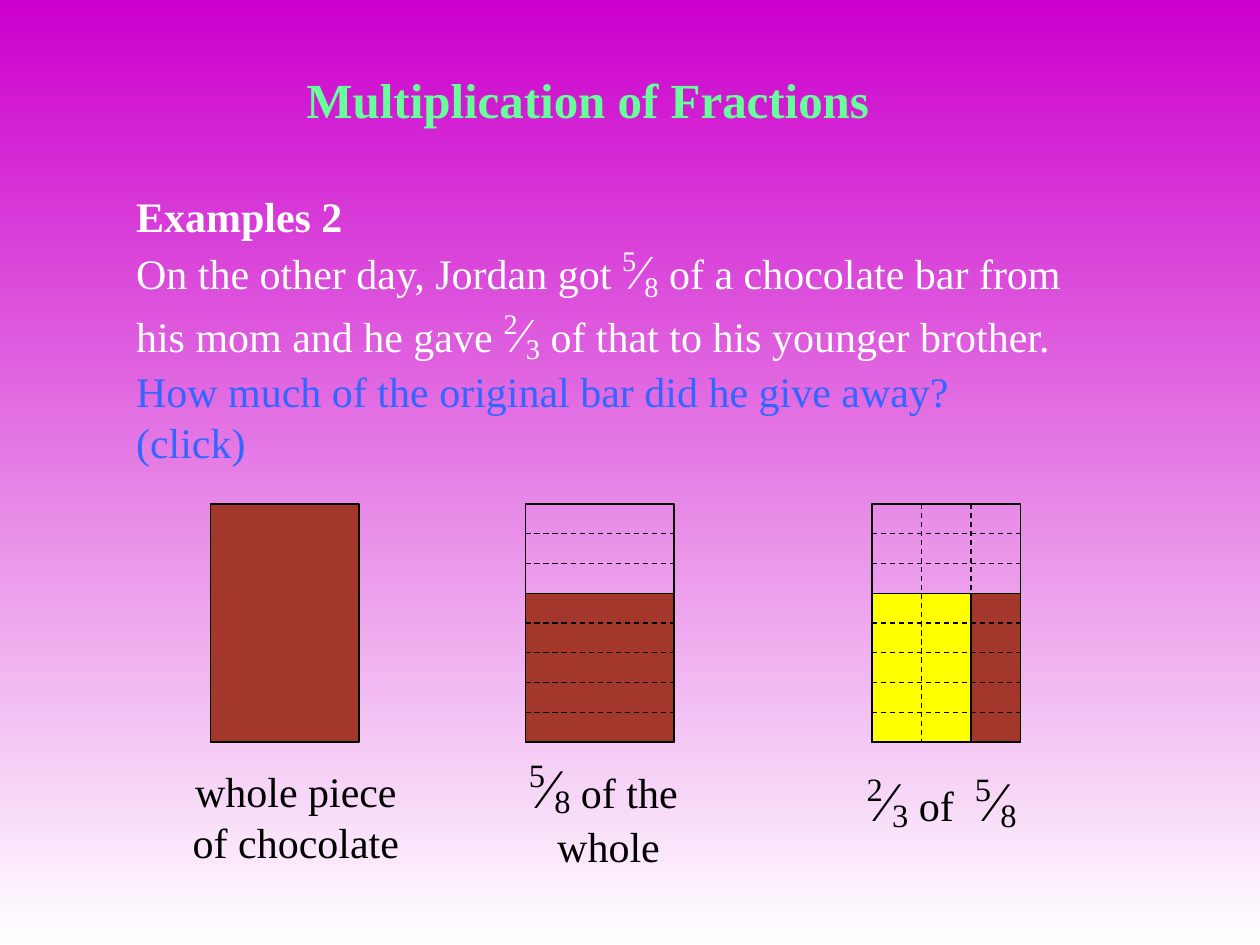
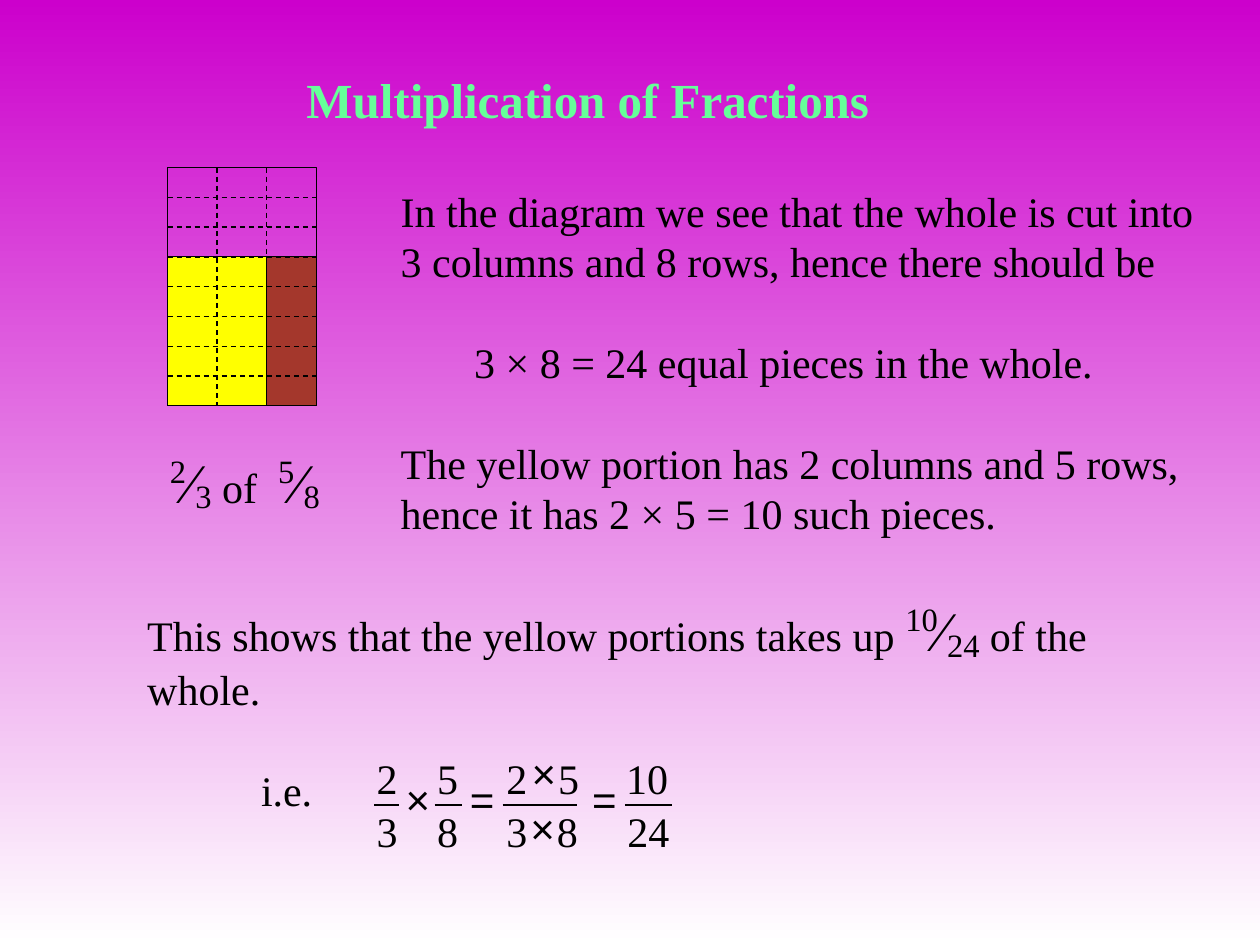
from dataclasses import dataclass
from typing import Optional

from lxml.etree import SubElement
from pptx import Presentation
from pptx.dml.color import RGBColor
from pptx.enum.dml import MSO_LINE
from pptx.enum.shapes import MSO_CONNECTOR, MSO_SHAPE
from pptx.enum.text import MSO_ANCHOR, MSO_AUTO_SIZE, PP_ALIGN
from pptx.oxml.ns import qn
from pptx.util import Inches, Pt

COLORS = {
    "top": "CC00CC", "bottom": "FFFFFF", "title": "66FF99", "ink": "000000",
    "white": "FFFFFF", "question": "3366FF", "chocolate": "A4372C", "given": "FFFF00",
}
SERIF, SANS = "Times New Roman", "Arial"
WIDTH, HEIGHT = Inches(10), Inches(7.5)
COLUMN, ROW = WIDTH / 100, HEIGHT / 75  # square grid cells
BAR_COLUMNS, BAR_ROWS = 11.8, 18.9
BODY_SIZE, LINE_FACTOR = 24, 1.2
BLANK_LINE = BODY_SIZE * LINE_FACTOR


@dataclass(frozen=True)
class Area:
    """A rectangle in grid columns and rows."""
    left: float
    top: float
    width: float
    height: float

    def lengths(self) -> tuple[int, int, int, int]:
        return (round(self.left * COLUMN), round(self.top * ROW),
                round(self.width * COLUMN), round(self.height * ROW))


@dataclass(frozen=True)
class Span:
    text: str
    size: Optional[float] = None
    baseline: int = 0


@dataclass(frozen=True)
class Para:
    spans: tuple[Span, ...]
    color: str = "ink"
    size: float = BODY_SIZE
    bold: bool = False
    align: PP_ALIGN = PP_ALIGN.LEFT
    before: float = 0
    indent: float = 0
    font: str = SERIF


@dataclass(frozen=True)
class ChocolateBar:
    """A bar cut into rows and columns, with its lowest rows kept."""
    left: float
    top: float
    rows: int = 1
    columns: int = 1
    kept_rows: int = 1
    given_columns: int = 0


@dataclass(frozen=True)
class Symbol:
    text: str
    left: float
    top: float


def plain(text: str, **style) -> Para:
    return Para((Span(text),), **style)


def fraction(top: str, bottom: str, size: float = 32, drop: int = -10) -> tuple[Span, ...]:
    return Span(top, size, 36), Span("⁄", size), Span(bottom, size, drop)


def write(frame, paras: list[Para], wrap: bool = True, inset: bool = True) -> None:
    frame.word_wrap = wrap
    frame.auto_size = MSO_AUTO_SIZE.NONE
    frame.vertical_anchor = MSO_ANCHOR.TOP
    if not inset:
        frame.margin_left = frame.margin_right = frame.margin_top = frame.margin_bottom = 0
    for index, para in enumerate(paras):
        paragraph = frame.add_paragraph() if index else frame.paragraphs[0]
        properties = paragraph._p.get_or_add_pPr()
        properties.set("marL", str(round(para.indent * COLUMN)))
        properties.set("indent", "0")
        SubElement(properties, qn("a:buNone"))
        paragraph.alignment = para.align
        paragraph.space_before = Pt(para.before)
        if len(para.spans) == 1:
            paragraph.line_spacing = Pt(para.size * LINE_FACTOR)
        paragraph.font.name = para.font
        paragraph.font.size = Pt(para.size)
        paragraph.font.bold = para.bold
        paragraph.font.color.rgb = RGBColor.from_string(COLORS[para.color])
        for span in para.spans:
            for number, text in enumerate(span.text.split("\n")):
                if number:
                    paragraph.add_line_break()
                run = paragraph.add_run()
                run.text = text
                if span.size:
                    run.font.size = Pt(span.size)
                if span.baseline:
                    run._r.get_or_add_rPr().set("baseline", str(span.baseline * 1000))


def fill_placeholder(shape, area: Area, paras: list[Para], wrap: bool = True) -> None:
    shape.left, shape.top, shape.width, shape.height = area.lengths()
    write(shape.text_frame, paras, wrap)


def add_text(page, area: Area, paras: list[Para], wrap: bool = False, inset: bool = True) -> None:
    write(page.shapes.add_textbox(*area.lengths()).text_frame, paras, wrap, inset)


def add_box(page, area: Area, fill: Optional[str] = None):
    box = page.shapes.add_shape(MSO_SHAPE.RECTANGLE, *area.lengths())
    box.shadow.inherit = False
    if fill:
        box.fill.solid()
        box.fill.fore_color.rgb = RGBColor.from_string(COLORS[fill])
    else:
        box.fill.background()
    box.line.color.rgb = RGBColor.from_string(COLORS["ink"])
    box.line.width = Pt(0.75)
    return box


def add_line(page, area: Area, weight: float = 0.75, dashed: bool = True):
    left, top, width, height = area.lengths()
    line = page.shapes.add_connector(MSO_CONNECTOR.STRAIGHT, left, top, left + width, top + height)
    SubElement(line._element.spPr, qn("a:effectLst"))
    line.line.color.rgb = RGBColor.from_string(COLORS["ink"])
    line.line.width = Pt(weight)
    if dashed:
        line.line.dash_style = MSO_LINE.DASH
    return line


def draw_bar(page, bar: ChocolateBar) -> None:
    row, column = BAR_ROWS / bar.rows, BAR_COLUMNS / bar.columns
    kept_top = bar.top + (bar.rows - bar.kept_rows) * row
    kept_height = bar.kept_rows * row
    add_box(page, Area(bar.left, kept_top, BAR_COLUMNS, kept_height), "chocolate")
    if bar.given_columns:
        add_box(page, Area(bar.left, kept_top, bar.given_columns * column, kept_height), "given")
    if bar.rows == 1:
        return
    outline = add_box(page, Area(bar.left, bar.top, BAR_COLUMNS, BAR_ROWS))
    for cut in range(1, bar.columns):
        add_line(page, Area(bar.left + cut * column, bar.top, 0, BAR_ROWS))
    for cut in range(1, bar.rows):
        line = add_line(page, Area(bar.left, bar.top + cut * row, BAR_COLUMNS, 0))
        if cut * 2 == bar.rows:
            line.begin_connect(outline, 1)
            line.end_connect(outline, 3)


def set_background(deck) -> None:
    fill = deck.slide_master.background.fill
    fill.gradient()
    fill.gradient_angle = 270
    for stop, name in zip(fill.gradient_stops, ("top", "bottom")):
        stop.color.rgb = RGBColor.from_string(COLORS[name])


def add_page(deck, body_area: Area, body: list[Para]):
    page = deck.slides.add_slide(deck.slide_layouts[1])
    title = plain("Multiplication of Fractions", color="title", size=28, bold=True,
                  align=PP_ALIGN.CENTER)
    fill_placeholder(page.shapes.title, Area(23.3, 5, 46.7, 5.7), [title], wrap=False)
    fill_placeholder(page.placeholders[1], body_area, body)
    return page


TWO_THIRDS_OF_FIVE_EIGHTHS = Para(fraction("2", "3") + (Span(" of  "),) + fraction("5", "8"))


def build_example(deck) -> None:
    story = (Span("On the other day, Jordan got "), *fraction("5", "8", 28, -16),
             Span(" of a chocolate bar from his mom and he gave "),
             *fraction("2", "3", 28, -16), Span(" of that to his younger brother."))
    page = add_page(deck, Area(9.8, 14.6, 77.7, 22.3), [
        plain("Examples 2", color="white", bold=True),
        Para(story, color="white"),
        plain("How much of the original bar did he give away?", color="question"),
        plain("(click)", color="question"),
    ])
    add_text(page, Area(14.3, 60.3, 19.2, 9),
             [plain("whole piece \nof chocolate ", align=PP_ALIGN.CENTER)])
    add_text(page, Area(40.8, 59.2, 15, 10.3),
             [Para(fraction("5", "8") + (Span(" of the \nwhole"),), align=PP_ALIGN.CENTER)])
    add_text(page, Area(67.8, 60.3, 15.5, 6.3), [TWO_THIRDS_OF_FIVE_EIGHTHS])
    for bar in (ChocolateBar(16.7, 40),
                ChocolateBar(41.7, 40, rows=8, kept_rows=5),
                ChocolateBar(69.2, 40, rows=8, columns=3, kept_rows=5, given_columns=2)):
        draw_bar(page, bar)


def draw_equation(page) -> None:
    bar_row, upper_row, middle_row = 63.9, 59.7, 61.4
    for left, width in ((29.7, 2), (34.5, 2.2), (39.9, 5.9), (49.6, 3.7)):
        add_line(page, Area(left, bar_row, width, 0), weight=1, dashed=False)
    stacks = (("2", "3", 29.9, 29.9), ("5", "8", 34.7, 34.7), ("2", "3", 40.2, 40.2),
              ("5", "8", 44.3, 44.2), ("10", "24", 49.7, 49.8))
    symbols = [Symbol("×", 32.2, middle_row), Symbol("=", 37.3, middle_row),
               Symbol("=", 47, middle_row), Symbol("×", 42.2, 59.3), Symbol("×", 42.1, 63.7)]
    for upper, lower, upper_left, lower_left in stacks:
        symbols += [Symbol(upper, upper_left, upper_row), Symbol(lower, lower_left, bar_row)]
    for symbol in symbols:
        font = SERIF if symbol.text.isdigit() else SANS
        add_text(page, Area(symbol.left, symbol.top, 4.7, 4.6),
                 [plain(symbol.text, font=font)], inset=False)


def build_explanation(deck) -> None:
    page = add_page(deck, Area(30.8, 14.2, 66.7, 25), [
        plain("In the diagram we see that the whole is cut into 3 columns and 8 rows, "
              "hence there should be"),
        plain("3 × 8 = 24 equal pieces in the whole.", before=BLANK_LINE, indent=5.83),
        plain("The yellow portion has 2 columns and 5 rows, hence it has "
              "2 × 5 = 10 such pieces.", before=BLANK_LINE),
    ])
    add_text(page, Area(12.5, 35, 14.6, 6.3), [TWO_THIRDS_OF_FIVE_EIGHTHS])
    conclusion = (Span("This shows that the yellow portions takes up "),
                  *fraction("10", "24"), Span(" of the whole."))
    add_text(page, Area(10.7, 46.8, 81.8, 18.3),
             [Para(conclusion), plain("i.e.", before=BLANK_LINE, indent=9.03)], wrap=True)
    draw_bar(page, ChocolateBar(13.3, 13.3, rows=8, columns=3, kept_rows=5, given_columns=2))
    draw_equation(page)


def main() -> None:
    deck = Presentation()
    deck.slide_width, deck.slide_height = WIDTH, HEIGHT
    set_background(deck)
    build_example(deck)
    build_explanation(deck)
    deck.save("out.pptx")


if __name__ == "__main__":
    main()
